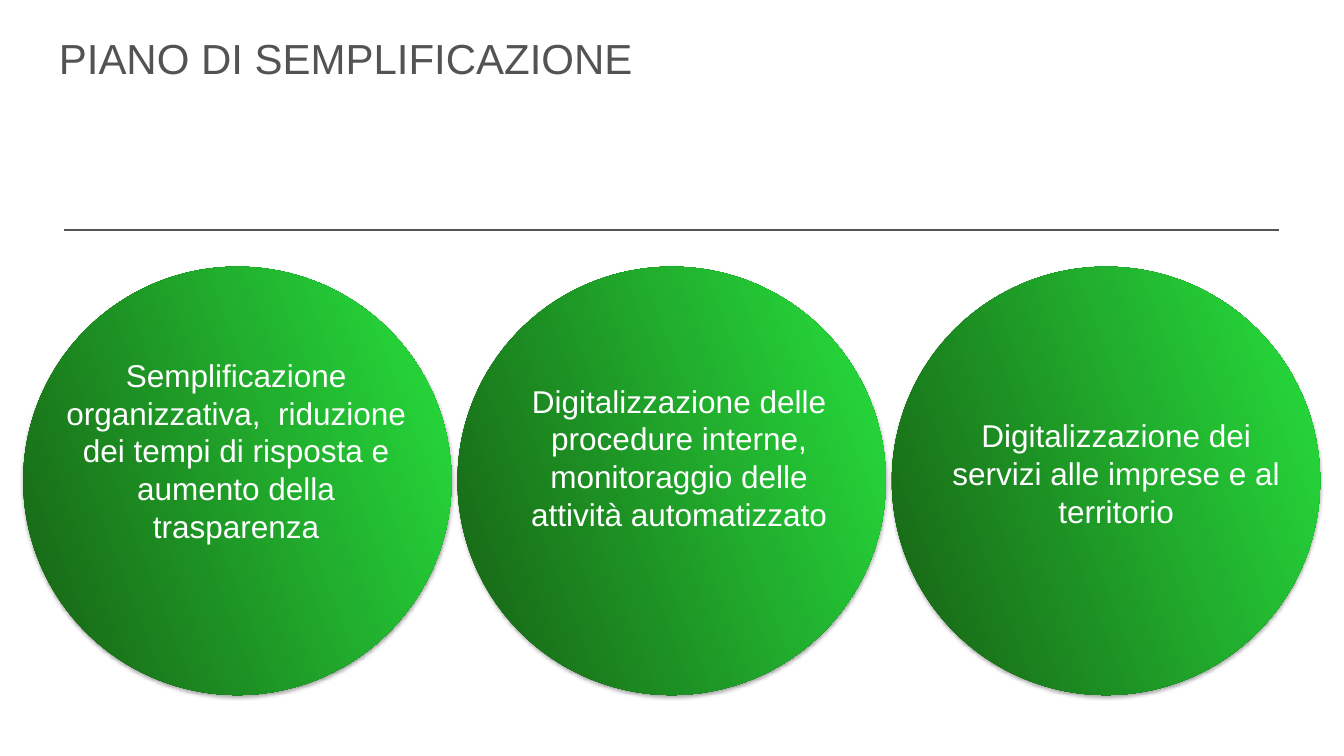
from lxml import etree
from pptx import Presentation
from pptx.dml.color import RGBColor
from pptx.enum.shapes import MSO_CONNECTOR, MSO_SHAPE
from pptx.enum.text import PP_ALIGN
from pptx.oxml import parse_xml
from pptx.oxml.ns import nsdecls, qn
from pptx.util import Cm, Pt

ELLIPSE = MSO_SHAPE.OVAL
STRAIGHT = MSO_CONNECTOR.STRAIGHT
LEFT, CENTER = PP_ALIGN.LEFT, PP_ALIGN.CENTER

COLORS = {
    "grey": "535353",
    "white": "FFFFFF",
    "dark green": "176013",
    "light green": "27E13E",
    "shadow": "000000",
}
CIRCLE_LEFT, CIRCLE_TOP, CIRCLE_SIZE, CIRCLE_STEP = 1.17, 13.44, 21.59, 21.89
GOALS = [
    ("Semplificazione organizzativa,  riduzione dei tempi di risposta e aumento della trasparenza",
     (2.87, 17.7, 18.06, 12.01)),
    ("Digitalizzazione delle procedure interne, monitoraggio delle attività automatizzato",
     (25.55, 19, 17.35, 11.63)),
    ("Digitalizzazione dei servizi alle imprese e al territorio",
     (47.63, 20.73, 17.25, 8.15)),
]


def rgb(name):
    return RGBColor.from_string(COLORS[name])


class SlideBuilder:
    """Draws the elements of the simplification plan on one slide."""

    font = "Arial"

    def __init__(self, slide):
        self.slide = slide

    def text(self, words, place, size, color, align=LEFT, inset=0):
        box = self.slide.shapes.add_textbox(*map(Cm, place))
        frame = box.text_frame
        frame.word_wrap = True
        frame.margin_left = frame.margin_right = Cm(inset)
        frame.margin_top = frame.margin_bottom = Cm(inset)
        para = frame.paragraphs[0]
        para.text = words
        para.alignment = align
        para.font.name = self.font
        para.font.size = Pt(size)
        para.font.color.rgb = rgb(color)

    def rule(self, left, right, top, width, color):
        line = self.slide.shapes.add_connector(STRAIGHT, Cm(left), Cm(top), Cm(right), Cm(top))
        line.line.width = Pt(width)
        line.line.color.rgb = rgb(color)
        etree.SubElement(line._element.spPr, qn("a:effectLst"))

    def circle(self, left, top, size):
        circle = self.slide.shapes.add_shape(ELLIPSE, Cm(left), Cm(top), Cm(size), Cm(size))
        circle.line.fill.background()
        circle.fill.gradient()
        circle.fill.gradient_angle = 21
        for stop, color in zip(circle.fill.gradient_stops, ("dark green", "light green")):
            stop.color.rgb = rgb(color)
        circle.shadow.inherit = False
        effects = circle._element.spPr.find(qn("a:effectLst"))
        effects.append(parse_xml(
            f'<a:outerShdw {nsdecls("a")} blurRad="{Pt(5)}" dist="{Pt(3)}" dir="5400000" rotWithShape="0">'
            f'<a:srgbClr val="{COLORS["shadow"]}"><a:alpha val="35000"/></a:srgbClr></a:outerShdw>'
        ))


def main():
    deck = Presentation()
    deck.slide_width, deck.slide_height = Cm(67.74), Cm(38.1)
    page = SlideBuilder(deck.slides.add_slide(deck.slide_layouts[6]))
    for index in range(len(GOALS)):
        page.circle(CIRCLE_LEFT + index * CIRCLE_STEP, CIRCLE_TOP, CIRCLE_SIZE)
    page.text("PIANO DI SEMPLIFICAZIONE", (2.97, 1.65, 37.24, 6.5), 60, "grey")
    page.rule(3.25, 64.47, 11.61, 3, "grey")
    for words, place in GOALS:
        page.text(words, place, 45, "white", CENTER, 0.23)
    deck.save("out.pptx")


if __name__ == "__main__":
    main()
